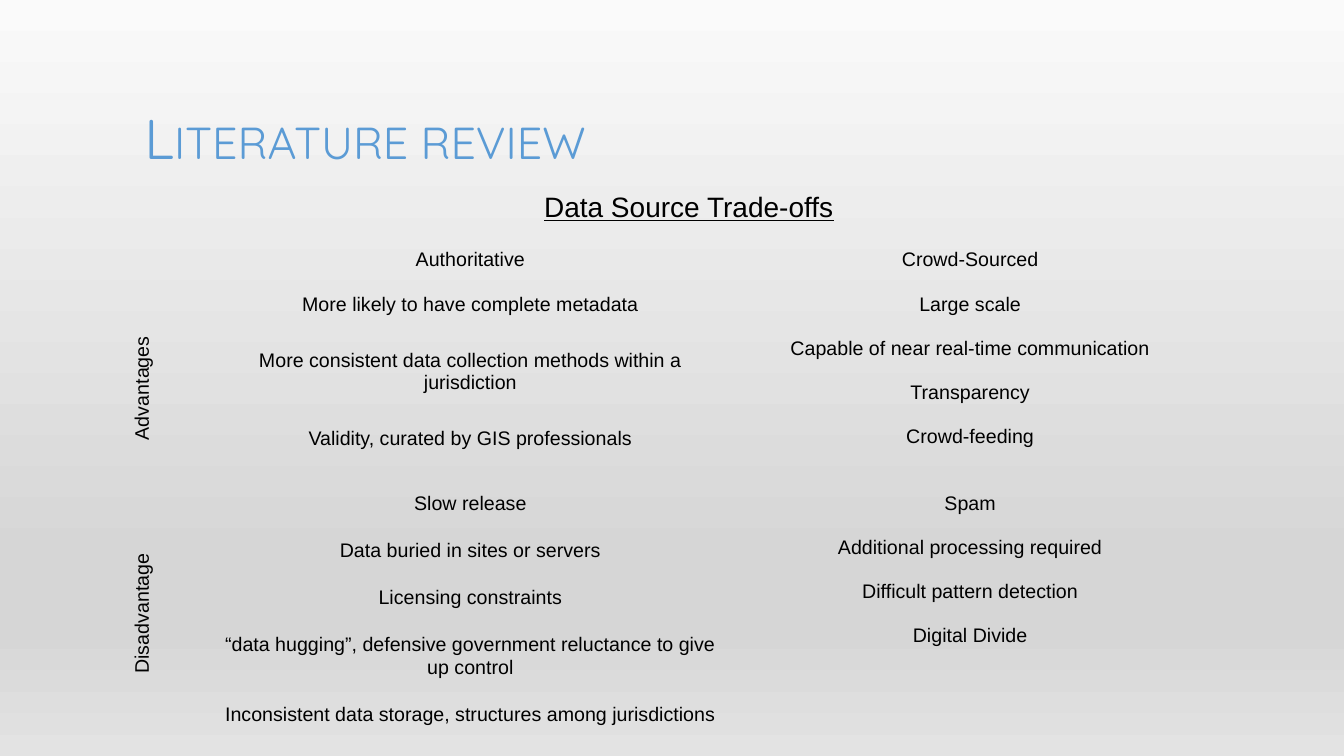
from dataclasses import dataclass

import pptx
import pptx.dml.color
import pptx.enum.text
import pptx.oxml
import pptx.oxml.ns
import pptx.util

Pt = pptx.util.Pt
ALIGN = pptx.enum.text.PP_ALIGN
ANCHOR = pptx.enum.text.MSO_ANCHOR


@dataclass(frozen=True)
class Theme:
    """Colours, fonts and type sizes of the slide."""
    accent: str = "5B9BD5"
    ink: str = "000000"
    backdrop: tuple = ((0, "FAFAFA"), (74, "D6D6D6"), (83, "D6D6D6"), (100, "E3E3E3"))
    title_font: str = "Quicksand"
    body_font: str = "Arial"
    title_size: float = 40
    heading_size: float = 20
    body_size: float = 14
    line_gap: float = 15.7
    plain_table: str = "{2D5ABB26-0587-4C30-8999-92F81FD0307C}"


THEME = Theme()

COLUMNS = (60, 372, 342)
ROWS = (32.4, 141.8, 152.6)
HEADERS = ("Authoritative", "Crowd-Sourced")
TRADE_OFFS = (
    ("Advantages",
     ("More likely to have complete metadata",
      "More consistent data collection methods within a jurisdiction",
      "Validity, curated by GIS professionals"), 24,
     ("Large scale", "Capable of near real-time communication",
      "Transparency", "Crowd-feeding")),
    ("Disadvantage",
     ("Slow release", "Data buried in sites or servers", "Licensing constraints",
      "“data hugging”, defensive government reluctance to give up control",
      "Inconsistent data storage, structures among jurisdictions"), 18,
     ("Spam", "Additional processing required",
      "Difficult pattern detection", "Digital Divide")),
)


def write(tf, lines, size=THEME.body_size, font=THEME.body_font, color=THEME.ink,
          align=ALIGN.CENTER, before=0, after=0, spacing=None, underline=None,
          small_caps=False):
    """Fill a text frame with one formatted paragraph per line."""
    for i, line in enumerate(lines):
        p = tf.paragraphs[0] if i == 0 else tf.add_paragraph()
        p.alignment = align
        p.space_before, p.space_after = Pt(before), Pt(after)
        p.line_spacing = spacing
        r = p.add_run()
        r.text = line
        r.font.name, r.font.size = font, Pt(size)
        r.font.color.rgb = pptx.dml.color.RGBColor.from_string(color)
        r.font.underline = underline
        if small_caps:
            r.font._element.set("cap", "small")


def paint_background(s, stops):
    """Give the slide a downward gradient through the given stops."""
    fill = s.background.fill
    fill.gradient()
    fill.gradient_angle = 270
    gs_list = s.background._cSld.find(".//" + pptx.oxml.ns.qn("a:gsLst"))
    for gs in list(gs_list):
        gs_list.remove(gs)
    for position, color in stops:
        gs_list.append(pptx.oxml.parse_xml(
            f'<a:gs {pptx.oxml.ns.nsdecls("a")} pos="{position * 1000}">'
            f'<a:srgbClr val="{color}"/></a:gs>'))


def add_text(s, box, text, anchor=ANCHOR.TOP, **style):
    """Add a wrapping text box at left, top, width, height."""
    tf = s.shapes.add_textbox(*map(Pt, box)).text_frame
    tf.word_wrap = True
    tf.vertical_anchor = anchor
    write(tf, [text], **style)


def add_plain_table(s, left, top, columns, rows):
    """Add a table without fills, borders or banding."""
    frame = s.shapes.add_table(len(rows), len(columns), Pt(left), Pt(top),
                               Pt(sum(columns)), Pt(sum(rows)))
    table = frame.table
    table.first_row = table.horz_banding = False
    table._tbl.tblPr.find(pptx.oxml.ns.qn("a:tableStyleId")).text = THEME.plain_table
    for column, width in zip(table.columns, columns):
        column.width = Pt(width)
    for row, height in zip(table.rows, rows):
        row.height = Pt(height)
    for cell in table.iter_cells():
        cell.fill.background()
        cell.text_frame.paragraphs[0].font.size = Pt(THEME.body_size)
    return table


def write_side_label(cell, text):
    """Write a row label that reads upwards."""
    cell._tc.get_or_add_tcPr().set("vert", "vert270")
    write(cell.text_frame, [text], before=THEME.line_gap)


def main():
    """Build the literature review slide."""
    prs = pptx.Presentation()
    prs.slide_width, prs.slide_height = Pt(960), Pt(540)
    s = prs.slides.add_slide(prs.slide_layouts[6])
    paint_background(s, THEME.backdrop)
    add_text(s, (96, 21.6, 768, 104.4), "Literature review", anchor=ANCHOR.BOTTOM,
             size=THEME.title_size, font=THEME.title_font, color=THEME.accent,
             align=ALIGN.LEFT, spacing=0.9, small_caps=True)
    table = add_plain_table(s, 90, 174, COLUMNS, ROWS)
    for column, header in enumerate(HEADERS, start=1):
        write(table.cell(0, column).text_frame, [header])
    for row, (label, authoritative, gap, crowd) in enumerate(TRADE_OFFS, start=1):
        write_side_label(table.cell(row, 0), label)
        write(table.cell(row, 1).text_frame, authoritative, after=gap)
        write(table.cell(row, 2).text_frame, crowd, after=THEME.line_gap)
    add_text(s, (378, 131.8, 228, 31.7), "Data Source Trade-offs",
             size=THEME.heading_size, underline=True)
    prs.save("out.pptx")


if __name__ == "__main__":
    main()
